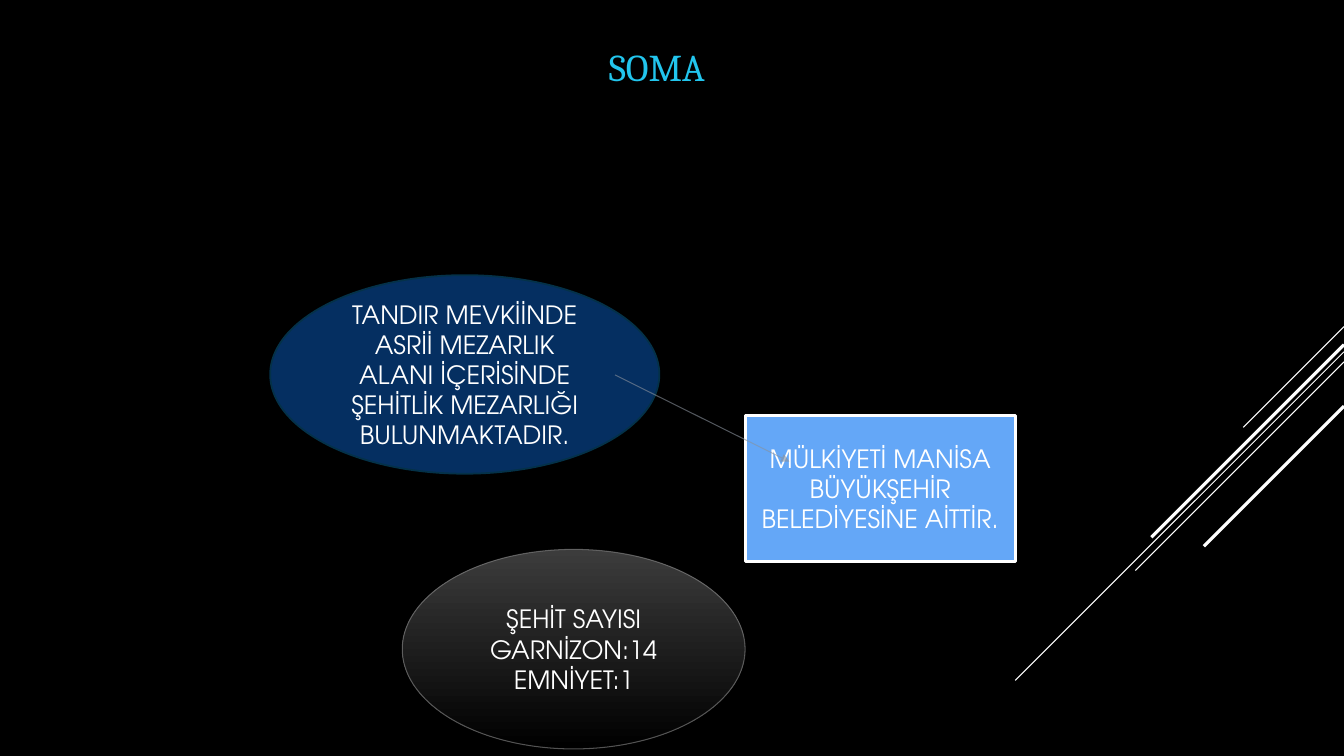
from lxml import etree
from pptx import Presentation
from pptx.dml.color import RGBColor
from pptx.enum.shapes import MSO_CONNECTOR as Connector, MSO_SHAPE as Shape
from pptx.enum.text import MSO_ANCHOR as Anchor, PP_ALIGN as Align
from pptx.oxml.ns import qn
from pptx.util import Inches, Pt

BLACK = RGBColor(0x00, 0x00, 0x00)
WHITE = RGBColor(0xFF, 0xFF, 0xFF)
CYAN = RGBColor(0x22, 0xC5, 0xED)
GREEN = RGBColor(0x50, 0x7E, 0x0E)
NAVY = RGBColor(0x05, 0x2F, 0x61)
DARK_TEAL = RGBColor(0x04, 0x31, 0x48)
SKY = RGBColor(0x64, 0xA7, 0xF7)
CHARCOAL = RGBColor(0x3C, 0x3C, 0x3C)
GREY = RGBColor(0x89, 0x89, 0x89)
BLUE_GREY = RGBColor(0x89, 0x91, 0x9C)


class Board:
    """Holds the style and the current page."""

    body_font = "TeX Gyre Adventor"
    title_font = "Cambria"

    def __init__(self, page):
        self.page = page
        fill = page.background.fill
        fill.solid()
        fill.fore_color.rgb = BLACK

    def style_line(self, line, color, width, opacity=100):
        line.color.rgb = color
        line.width = Pt(width)
        if opacity < 100:
            tint = line.fill._xPr.find(".//" + qn("a:srgbClr"))
            etree.SubElement(tint, qn("a:alpha"), val=str(opacity * 1000))

    def set_text(self, frame, text, font=body_font, size=18, color=WHITE,
                 align=Align.CENTER, anchor=Anchor.MIDDLE):
        frame.word_wrap = True
        frame.vertical_anchor = anchor
        frame.text = text
        for para in frame.paragraphs:
            para.alignment = align
            for span in para.runs:
                span.font.name = font
                span.font.size = Pt(size)
                span.font.color.rgb = color

    def title(self, text, left, top, width, height, indent):
        box = self.page.shapes.add_textbox(
            Inches(left), Inches(top), Inches(width), Inches(height))
        self.set_text(box.text_frame, text, font=self.title_font, size=27,
                      color=CYAN, align=Align.LEFT, anchor=Anchor.BOTTOM)
        para = box.text_frame.paragraphs[0]
        para._p.get_or_add_pPr().set("marL", str(Inches(indent)))
        # Thin outline around the letters
        outline = etree.Element(qn("a:ln"), w=str(Pt(0.71)))
        fill = etree.SubElement(outline, qn("a:solidFill"))
        etree.SubElement(fill, qn("a:srgbClr"), val=str(GREEN))
        para.runs[0]._r.get_or_add_rPr().insert(0, outline)

    def panel(self, kind, text, left, top, width, height, colors, line):
        shape = self.page.shapes.add_shape(
            kind, Inches(left), Inches(top), Inches(width), Inches(height))
        shape.shadow.inherit = False
        if len(colors) == 1:
            shape.fill.solid()
            shape.fill.fore_color.rgb = colors[0]
        else:
            shape.fill.gradient()
            shape.fill.gradient_angle = 270
            for stop, color in zip(shape.fill.gradient_stops, colors):
                stop.color.rgb = color
        self.style_line(shape.line, *line)
        self.set_text(shape.text_frame, text)

    def line(self, start, end, color, width, opacity=100, arrow=False):
        points = [Inches(value) for value in (*start, *end)]
        link = self.page.shapes.add_connector(Connector.STRAIGHT, *points)
        self.style_line(link.line, color, width, opacity)
        if arrow:
            etree.SubElement(link.line._get_or_add_ln(), qn("a:tailEnd"),
                             type="triangle")
        etree.SubElement(link._element.spPr, qn("a:effectLst"))


def main():
    deck = Presentation()
    deck.slide_width, deck.slide_height = Inches(13.33), Inches(7.5)
    board = Board(deck.slides.add_slide(deck.slide_layouts[6]))

    # Diagonal strokes falling from the right edge: top, run, width
    for top, run, width in [(3.24, 1, 0.75), (3.49, 3.26, 0.75),
                            (3.59, 2.07, 0.75), (3.42, 1.91, 2.25),
                            (4.03, 1.39, 2.25)]:
        board.line((13.33, top), (13.33 - run, top + run), WHITE, width)

    # Title
    board.title("SOMA", 2.67, 0.31, 8.58, 0.62, indent=3.27)

    # Cemetery, its owner and the link between them
    board.panel(Shape.OVAL,
                "TANDIR MEVKİİNDE ASRİİ MEZARLIK ALANI İÇERİSİNDE "
                "ŞEHİTLİK MEZARLIĞI BULUNMAKTADIR.",
                2.68, 2.73, 3.86, 1.97, [NAVY], (DARK_TEAL, 1.25))
    board.panel(Shape.RECTANGLE,
                "MÜLKİYETİ MANİSA BÜYÜKŞEHİR BELEDİYESİNE AİTTİR.",
                7.39, 4.12, 2.68, 1.45, [SKY], (WHITE, 2.25))
    board.line((6.1, 3.72), (7.83, 4.58), BLUE_GREY, 0.75, opacity=60,
               arrow=True)

    # Counts
    board.panel(Shape.OVAL, "ŞEHİT SAYISI\nGARNİZON:14\nEMNİYET:1",
                3.99, 5.45, 3.4, 1.98, [CHARCOAL, BLACK], (GREY, 0.75, 60))

    deck.save("out.pptx")


if __name__ == "__main__":
    main()
